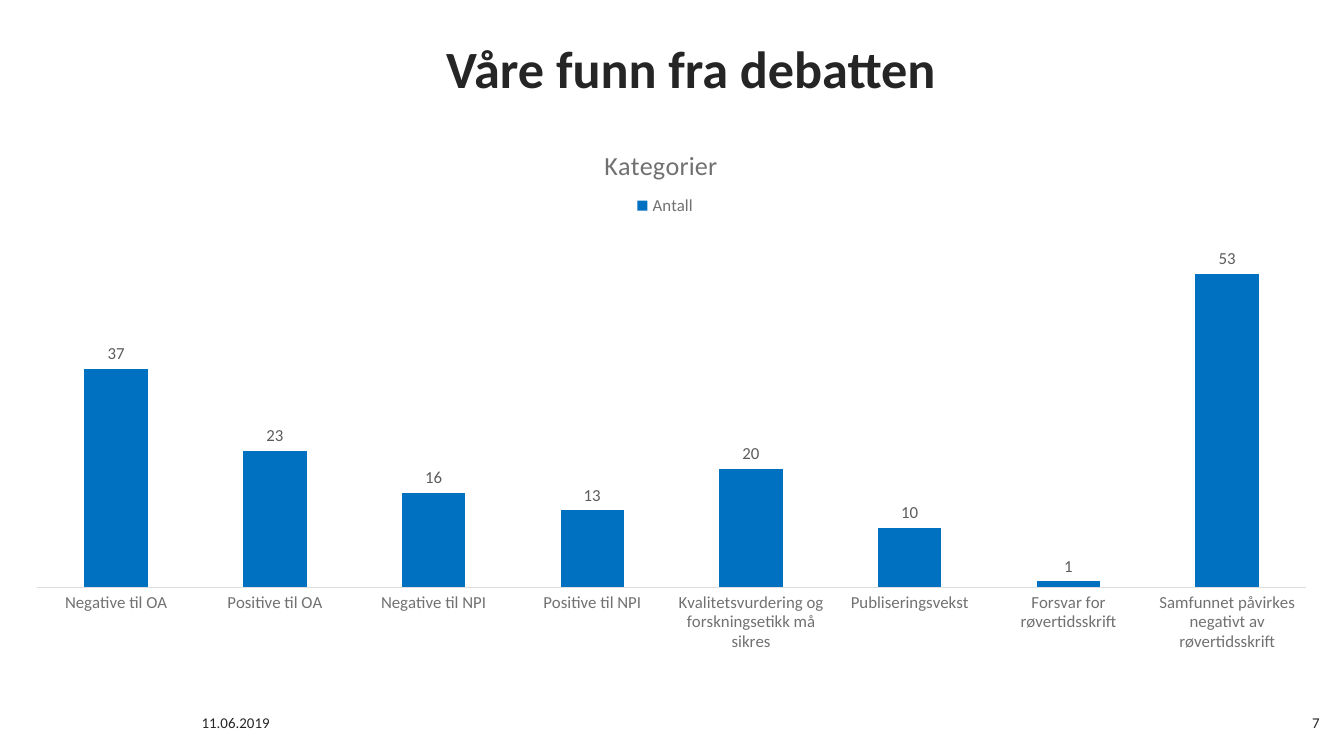
"""Build a slide with a column chart of debate categories."""
import pptx
import pptx.chart.data
import pptx.dml.color
import pptx.enum.chart
import pptx.enum.text
import pptx.oxml
import pptx.oxml.ns
import pptx.util

Cm = pptx.util.Cm
Pt = pptx.util.Pt
ALIGN = pptx.enum.text.PP_ALIGN
ANCHOR = pptx.enum.text.MSO_ANCHOR
KIND = pptx.enum.chart

INK, GREY, DARK, RULE, BLUE = "252525", "717171", "5C5C5C", "DEDEDE", "0070C0"
TITLE = "Våre funn fra debatten"
HEAD = "Kategorier"
SERIES = "Antall"
COUNTS = {
    "Negative til OA": 37,
    "Positive til OA": 23,
    "Negative til NPI": 16,
    "Positive til NPI": 13,
    "Kvalitetsvurdering og forskningsetikk må sikres": 20,
    "Publiseringsvekst": 10,
    "Forsvar for røvertidsskrift": 1,
    "Samfunnet påvirkes negativt av røvertidsskrift": 53,
}
FOOTER = [
    ("11.06.2019", (3.81, 13.44, 4.6, 0.43), ALIGN.LEFT),
    ("7", (19.02, 13.44, 5.92, 0.43), ALIGN.RIGHT),
]


def color(code):
    return pptx.dml.color.RGBColor.from_string(code)


def style(font, size, code, bold=False):
    font.name, font.size, font.bold = "Calibri", Pt(size), bold
    font.color.rgb = color(code)


def write(frame, text, size=8, code=INK, bold=False, align=ALIGN.LEFT):
    para = frame.paragraphs[0]
    para.alignment = align
    run = para.add_run()
    run.text = text
    style(run.font, size, code, bold)


def place(node, index, inner=False, **spots):
    for old in node.findall(pptx.oxml.ns.qn("c:layout")):
        node.remove(old)
    tags = '<c:layoutTarget val="inner"/>' if inner else ""
    tags += "".join(f'<c:{key}Mode val="edge"/>' for key in "xy")
    tags += "".join(f'<c:{key} val="{val}"/>' for key, val in spots.items())
    space = pptx.oxml.ns.nsdecls("c")
    node.insert(index, pptx.oxml.parse_xml(
        f"<c:layout {space}><c:manualLayout>{tags}</c:manualLayout></c:layout>"))


def add_title(slide):
    title = slide.shapes.title
    title.left, title.top, title.width, title.height = map(Cm, (1.14, 0.56, 23.83, 1.45))
    frame = title.text_frame
    frame.word_wrap = True
    frame.vertical_anchor = ANCHOR.TOP
    frame.auto_size = pptx.enum.text.MSO_AUTO_SIZE.SHAPE_TO_FIT_TEXT
    write(frame, TITLE, size=28, bold=True, align=ALIGN.CENTER)


def add_footer(slide):
    for text, box, align in FOOTER:
        frame = slide.shapes.add_textbox(*map(Cm, box)).text_frame
        frame.word_wrap = True
        frame.vertical_anchor = ANCHOR.MIDDLE
        frame.margin_left = frame.margin_right = 0
        frame.margin_top = frame.margin_bottom = 0
        write(frame, text, align=align)


def add_chart(slide):
    data = pptx.chart.data.CategoryChartData()
    data.categories = list(COUNTS)
    data.add_series(SERIES, list(COUNTS.values()))
    chart = slide.shapes.add_chart(
        KIND.XL_CHART_TYPE.COLUMN_CLUSTERED,
        *map(Cm, (0.2, 2.16, 24.74, 10.64)), data).chart
    style(chart.font, 10, INK)

    chart.has_title = True
    write(chart.chart_title.text_frame, HEAD, size=14, code=GREY, align=ALIGN.CENTER)
    chart.chart_title.include_in_layout = False
    place(chart.chart_title._element, 1, x=0.45, y=0.05)

    chart.has_legend = True
    chart.legend.position = KIND.XL_LEGEND_POSITION.TOP
    chart.legend.include_in_layout = False
    style(chart.legend.font, 9, GREY)

    axis = chart.category_axis
    axis.major_tick_mark = KIND.XL_TICK_MARK.NONE
    axis.format.line.color.rgb = color(RULE)
    axis.format.line.width = Pt(0.75)
    style(axis.tick_labels.font, 9, GREY)
    scale = chart.value_axis
    scale.minimum_scale, scale.maximum_scale = 0, 60
    scale.has_major_gridlines = False
    scale.visible = False

    plot = chart.plots[0]
    plot.gap_width, plot.overlap, plot.vary_by_categories = 150, -25, False
    fill = plot.series[0].format.fill
    fill.solid()
    fill.fore_color.rgb = color(BLUE)
    plot.has_data_labels = True
    labels = plot.data_labels
    labels.show_value = True
    labels.position = KIND.XL_LABEL_POSITION.OUTSIDE_END
    style(labels.font, 9, DARK)
    area = chart._chartSpace.chart.plotArea
    place(area, 0, inner=True, x=0.02, y=0.21, w=0.97, h=0.63)


def main():
    deck = pptx.Presentation()
    deck.slide_width, deck.slide_height = Cm(25.4), Cm(14.28)
    slide = deck.slides.add_slide(deck.slide_layouts[5])
    add_title(slide)
    add_chart(slide)
    add_footer(slide)
    deck.save("out.pptx")


if __name__ == "__main__":
    main()
